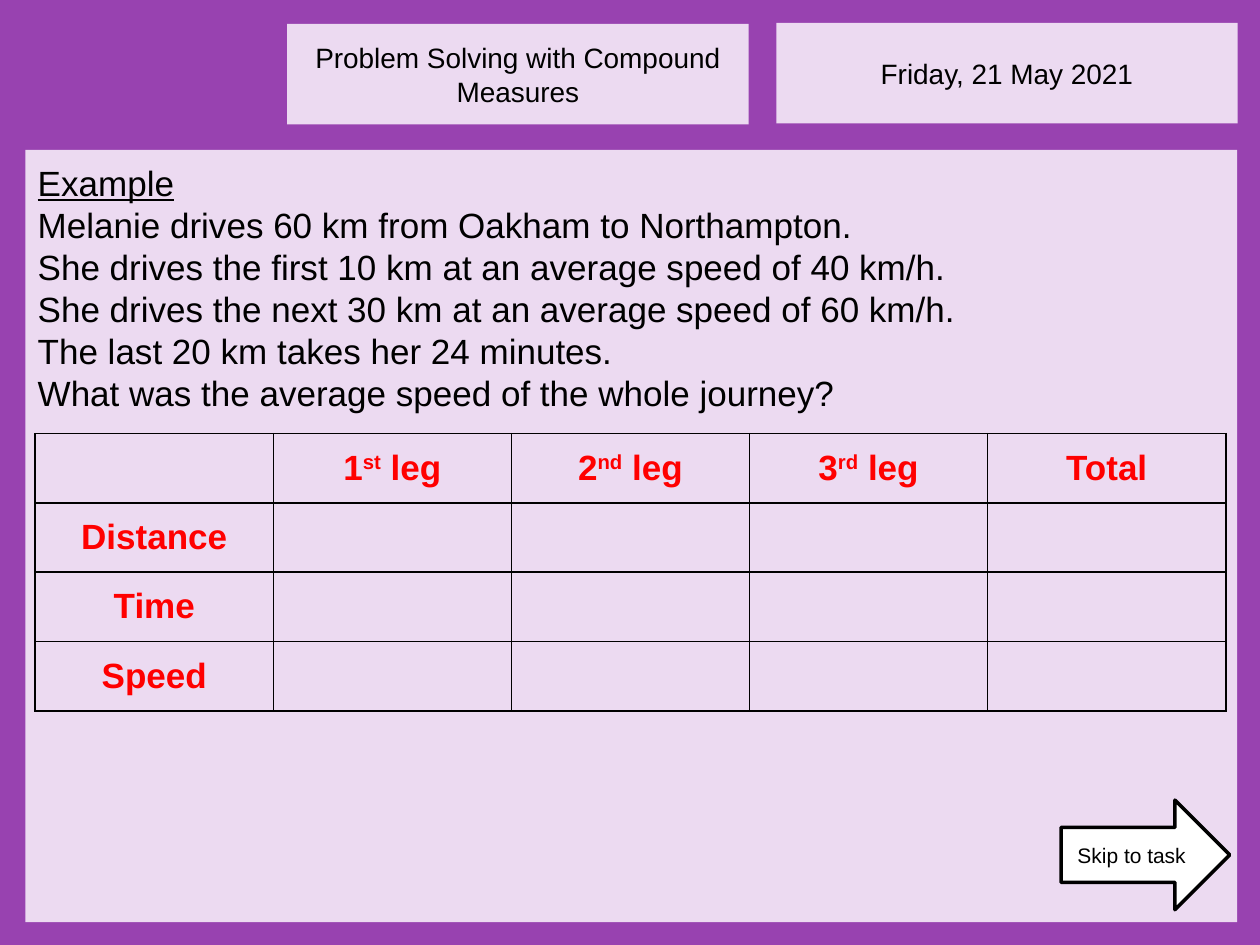
"""Build a maths slide with a worked example on compound measures."""
from dataclasses import dataclass

from lxml import etree
from pptx import Presentation
from pptx import util as u
from pptx.dml.color import RGBColor
from pptx.enum import shapes, text
from pptx.oxml import ns

PURPLE, LILAC, BLACK, RED, WHITE = "9842B0", "ECDAF1", "000000", "FF0000", "FFFFFF"


@dataclass(frozen=True)
class Panel:
    left: float
    top: float
    width: float
    height: float

    def box(self) -> list[u.Length]:
        return [u.Cm(v) for v in (self.left, self.top, self.width, self.height)]


@dataclass(frozen=True)
class Span:
    words: str
    underline: bool = False
    raised: bool = False


TITLE = Panel(5.79, 0.48, 9.3, 2.03)
DATE = Panel(15.65, 0.46, 9.3, 2.03)
EXAMPLE = Panel(0.51, 3.02, 24.43, 15.57)
LEGS = Panel(0.71, 8.74, 24, 5.59)
SKIP = Panel(21.39, 16.13, 3.4, 2.21)

QUESTION = [
    [Span("Example", underline=True)],
    [Span("Melanie drives 60 km from Oakham to Northampton.")],
    [Span("She drives the first 10 km at an average speed of 40 km/h.")],
    [Span("She drives the next 30 km at an average speed of 60 km/h.")],
    [Span("The last 20 km takes her 24 minutes.")],
    [Span("What was the average speed of the whole journey?")],
]
ORDINALS = [("1", "st"), ("2", "nd"), ("3", "rd")]
HEADINGS = [[Span(n), Span(end, raised=True), Span(" leg")] for n, end in ORDINALS]
HEADINGS.append([Span("Total")])
MEASURES = [[Span(name)] for name in ("Distance", "Time", "Speed")]


def colour(code: str) -> RGBColor:
    return RGBColor.from_string(code)


def fill(target, code: str) -> None:
    target.fill.solid()
    target.fill.fore_color.rgb = colour(code)


def write(frame, lines: list[list[Span]], *, size: int, ink: str = BLACK, bold: bool = False,
          align=text.PP_ALIGN.CENTER, anchor=text.MSO_ANCHOR.MIDDLE,
          inset: tuple[float, float] = (0.25, 0.13)) -> None:
    frame.word_wrap = True
    frame.auto_size = text.MSO_AUTO_SIZE.NONE
    frame.vertical_anchor = anchor
    frame.margin_left = frame.margin_right = u.Cm(inset[0])
    frame.margin_top = frame.margin_bottom = u.Cm(inset[1])
    for index, spans in enumerate(lines):
        line = frame.add_paragraph() if index else frame.paragraphs[0]
        properties = line._p.get_or_add_pPr()
        properties.set("marL", "0")
        properties.set("indent", "0")
        etree.SubElement(properties, ns.qn("a:buNone"))
        line.alignment = align
        line.space_before = line.space_after = u.Pt(0)
        for span in spans:
            run = line.add_run()
            run.text = span.words
            run.font.name, run.font.size, run.font.bold = "Arial", u.Pt(size), bold
            run.font.underline = span.underline
            run.font.color.rgb = colour(ink)
            if span.raised:
                run._r.get_or_add_rPr().set("baseline", "30000")


def place(placeholder, panel: Panel) -> None:
    placeholder.left, placeholder.top, placeholder.width, placeholder.height = panel.box()
    fill(placeholder, LILAC)


def add_block(slide, kind, panel: Panel, paint: str):
    block = slide.shapes.add_shape(kind, *panel.box())
    block.shadow.inherit = False
    fill(block, paint)
    block.line.fill.background()
    return block


def outline_cell(cell) -> None:
    properties = cell._tc.get_or_add_tcPr()
    for side in ("lnL", "lnR", "lnT", "lnB"):
        edge = etree.SubElement(properties, ns.qn(f"a:{side}"), w=str(u.Pt(1)))
        paint = etree.SubElement(edge, ns.qn("a:solidFill"))
        etree.SubElement(paint, ns.qn("a:srgbClr"), val=BLACK)
    cell.fill.background()


def add_legs_table(slide) -> None:
    rows, columns = len(MEASURES) + 1, len(HEADINGS) + 1
    table = slide.shapes.add_table(rows, columns, *LEGS.box()).table
    table.first_row = table.horz_banding = False
    for cell in table.iter_cells():
        outline_cell(cell)
    labels = [(table.cell(0, i), spans) for i, spans in enumerate(HEADINGS, 1)]
    labels += [(table.cell(i, 0), spans) for i, spans in enumerate(MEASURES, 1)]
    for cell, spans in labels:
        write(cell.text_frame, [spans], size=20, ink=RED, bold=True)
        cell.vertical_anchor = text.MSO_ANCHOR.MIDDLE


def main() -> None:
    deck = Presentation()
    deck.slide_width, deck.slide_height = u.Cm(25.4), u.Cm(19.05)
    slide = deck.slides.add_slide(deck.slide_layouts[1])
    fill(slide.background, PURPLE)

    title, example = slide.shapes.title, slide.placeholders[1]
    place(title, TITLE)
    write(title.text_frame, [[Span("Problem Solving with Compound Measures")]], size=16)
    place(example, EXAMPLE)
    write(example.text_frame, QUESTION, size=20, align=text.PP_ALIGN.LEFT,
          anchor=text.MSO_ANCHOR.TOP, inset=(0.25, 0.23))

    date = add_block(slide, shapes.MSO_SHAPE.RECTANGLE, DATE, LILAC)
    write(date.text_frame, [[Span("Friday, 21 May 2021")]], size=16)
    add_legs_table(slide)

    skip = add_block(slide, shapes.MSO_SHAPE.RIGHT_ARROW, SKIP, WHITE)
    skip.line.color.rgb = colour(BLACK)
    skip.line.width = u.Pt(2)
    write(skip.text_frame, [[Span("Skip to task")]], size=12, inset=(0.1, 0.1))

    deck.save("out.pptx")


if __name__ == "__main__":
    main()
